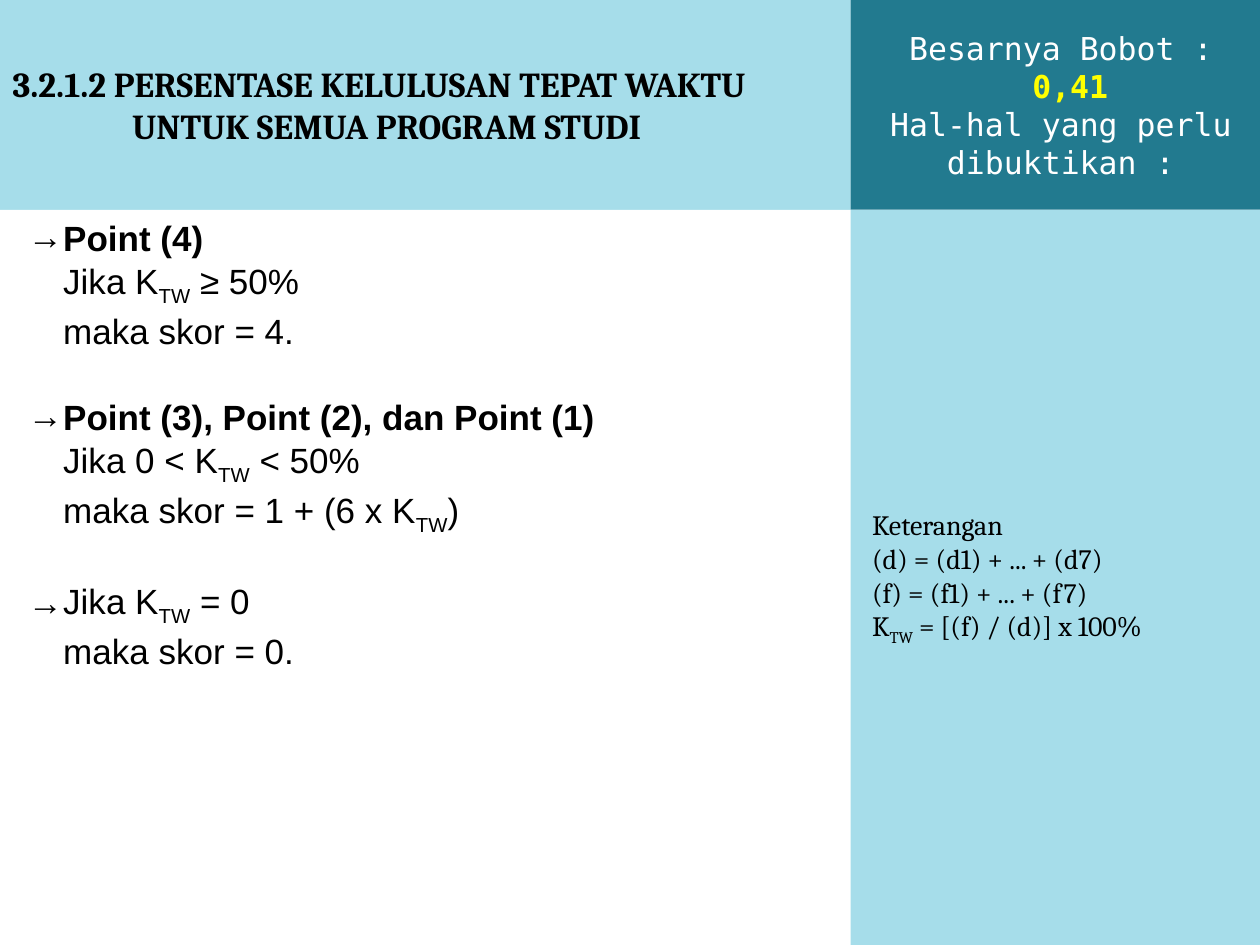
from lxml import etree
from pptx import Presentation
from pptx.dml.color import RGBColor
from pptx.enum import shapes, text
from pptx.oxml.ns import qn
from pptx.util import Cm, Pt

PALE = RGBColor(0xA6, 0xDD, 0xEA)
TEAL = RGBColor(0x22, 0x7A, 0x8F)
WHITE = RGBColor(0xFF, 0xFF, 0xFF)
BLACK = RGBColor(0, 0, 0)
YELLOW = RGBColor(0xFF, 0xFF, 0)

WIDTH, HEIGHT = Cm(25.4), Cm(19.05)
SPLIT, HEAD = Cm(17.15), Cm(4.23)


def panel(box, left, top, width, height, color, anchor):
    """Place and fill a box, and return its text frame."""
    box.left, box.top, box.width, box.height = left, top, width, height
    box.fill.solid()
    box.fill.fore_color.rgb = color
    frame = box.text_frame
    frame.word_wrap = True
    frame.auto_size = text.MSO_AUTO_SIZE.NONE
    frame.vertical_anchor = anchor
    return frame


def write(para, words, font, size, color, left=0, indent=0, bold=False,
          align=text.PP_ALIGN.LEFT, bullet=None):
    """Fill a paragraph; pieces between bars are set in turn plain and subscript."""
    props = para._p.get_or_add_pPr()
    props.set("marL", str(int(left)))
    props.set("indent", str(int(indent)))
    if bullet:
        etree.SubElement(props, qn("a:buChar")).set("char", bullet)
    else:
        etree.SubElement(props, qn("a:buNone"))
    para.alignment = align
    para.space_before = Pt(0)
    para.font.name, para.font.size = font, Pt(size)
    para.font.bold, para.font.color.rgb = bold, color
    for i, piece in enumerate(words.split("|")):
        run = para.add_run()
        run.text = piece
        if i % 2:
            run.font._element.set("baseline", "-25000")


prs = Presentation()
prs.slide_width, prs.slide_height = WIDTH, HEIGHT
slide = prs.slides.add_slide(prs.slide_layouts[1])
middle = text.MSO_ANCHOR.MIDDLE

# Title
frame = panel(slide.shapes.title, 0, 0, SPLIT, HEAD, PALE, middle)
write(frame.paragraphs[0],
      "3.2.1.2 PERSENTASE KELULUSAN TEPAT WAKTU UNTUK SEMUA PROGRAM STUDI",
      "Cambria", 20, BLACK, Cm(2.41), Cm(-2.41), bold=True)

# Scoring rules
groups = [
    ["Point (4)", "Jika K|TW| ≥ 50%", "maka skor = 4."],
    ["Point (3), Point (2), dan Point (1)", "Jika 0 < K|TW| < 50%",
     "maka skor = 1 + (6 x K|TW|)"],
    ["Jika K|TW| = 0", "maka skor = 0."],
]
frame = panel(slide.placeholders[1], 0, HEAD, SPLIT, HEIGHT - HEAD, WHITE,
              text.MSO_ANCHOR.TOP)
for g, lines in enumerate(groups):
    for i, line in enumerate(lines):
        first = i == 0
        para = frame.add_paragraph() if g or i else frame.paragraphs[0]
        write(para, line, "Arial", 20, BLACK, Cm(1.02),
              Cm(-0.71) if first else 0, bold=line.startswith("Point"),
              bullet="→" if first else None)
        para.space_after = Pt(1)
        if g and first:
            para.space_before = Pt(24)

# Side panels
boxes = []
for top, width, height, color in [(HEAD, WIDTH - SPLIT, HEIGHT - HEAD, PALE),
                                  (0, Cm(8.47), HEAD, TEAL)]:
    box = slide.shapes.add_shape(shapes.MSO_SHAPE.RECTANGLE, SPLIT, top, width, height)
    box.shadow.inherit = False
    box.line.fill.background()
    boxes.append(panel(box, SPLIT, top, width, height, color, middle))
notes, weight = boxes

legend = ["Keterangan", "(d) = (d1) + ... + (d7)", "(f) = (f1) + ... + (f7)",
          "K|TW| = [(f) / (d)] x 100%"]
for i, line in enumerate(legend):
    para = notes.add_paragraph() if i else notes.paragraphs[0]
    write(para, line, "Cambria", 16, BLACK, indent=Cm(0.18))

facts = [("Besarnya Bobot :", WHITE), (" 0,41", YELLOW),
         ("Hal-hal yang perlu dibuktikan :", WHITE)]
for i, (line, color) in enumerate(facts):
    para = weight.add_paragraph() if i else weight.paragraphs[0]
    write(para, line, "DejaVu Sans Mono", 18, color, bold=color == YELLOW,
          align=text.PP_ALIGN.CENTER)

prs.save("out.pptx")
